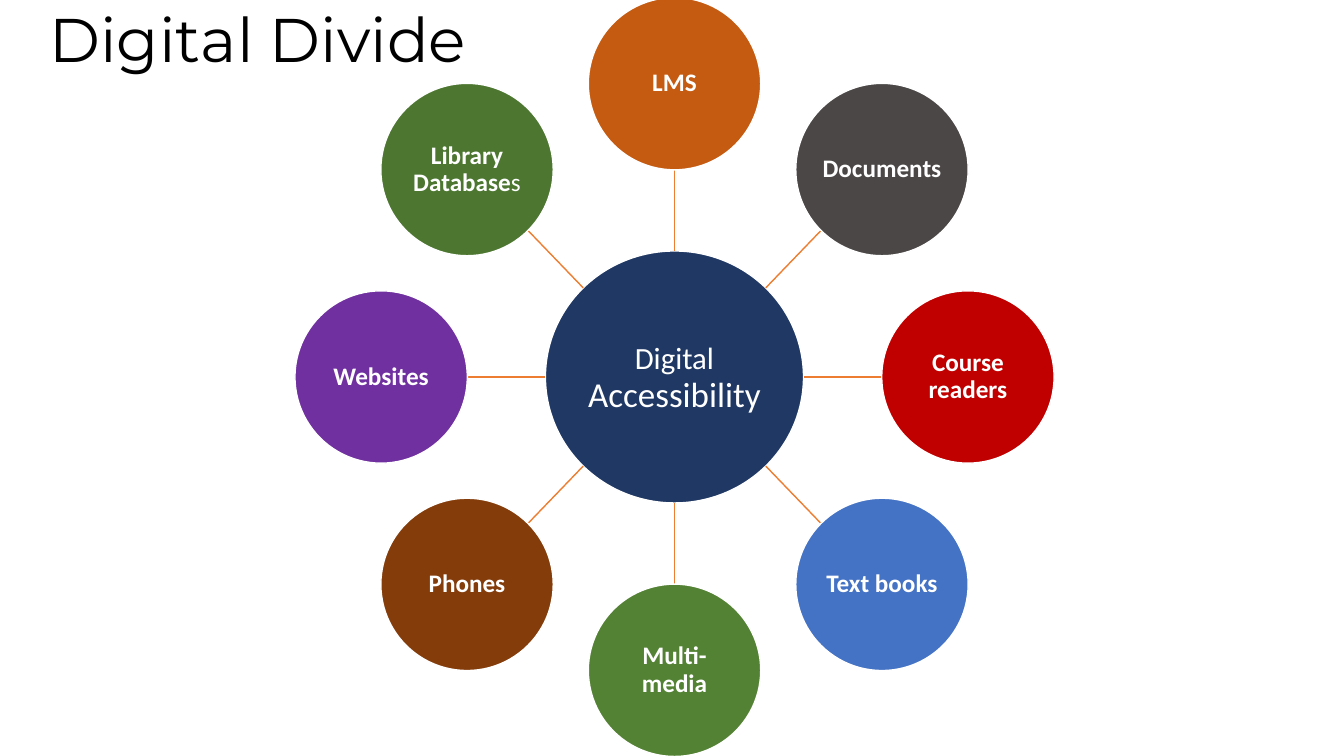
from math import cos, radians, sin

from lxml.etree import SubElement
from pptx import Presentation
from pptx.dml.color import RGBColor
from pptx.enum.shapes import MSO_CONNECTOR as Connector, MSO_SHAPE as Shape
from pptx.enum.text import MSO_ANCHOR as Anchor, MSO_AUTO_SIZE as AutoSize, PP_ALIGN as Align
from pptx.oxml.ns import qn
from pptx.util import Inches, Pt

TITLE = "Digital Divide"
HUB = [("Digital", 22, False), (" Accessibility", 25, False)]
# Clockwise from the top: colour name, then runs of (text, size, bold)
TOPICS = [
    ("orange", [("LMS", 18, True)]),
    ("grey", [("Documents", 18, True)]),
    ("red", [("Course readers", 18, True)]),
    ("blue", [("Text books", 18, True)]),
    ("green", [("Multi-media", 18, True)]),
    ("brown", [("Phones", 18, True)]),
    ("purple", [("Websites", 18, True)]),
    ("moss", [("Library Database", 18, True), ("s", 18, False)]),
]
COLORS = {
    "black": "000000", "white": "FFFFFF", "navy": "203864", "spoke": "ED7D31",
    "orange": "C55A11", "grey": "4B4747", "red": "C00000", "blue": "4472C4",
    "green": "548235", "brown": "843C0B", "purple": "7030A0", "moss": "4D7731",
}
CENTER_X, CENTER_Y = 6.69, 3.74
HUB_WIDTH, HUB_HEIGHT = 2.56, 2.5
TOPIC_SIZE = 1.71
ORBIT = 2.91


def color(name):
    return RGBColor.from_string(COLORS[name])


def add_circle(page, x, y, width, height, fill, runs, inset):
    """Draw an ellipse centred on (x, y) with a centred label."""
    circle = page.shapes.add_shape(Shape.OVAL, Inches(x - width / 2), Inches(y - height / 2),
                                   Inches(width), Inches(height))
    circle.shadow.inherit = False
    circle.fill.solid()
    circle.fill.fore_color.rgb = color(fill)
    circle.line.color.rgb = color("white")
    circle.line.width = Pt(1)
    frame = circle.text_frame
    frame.word_wrap = True
    frame.vertical_anchor = Anchor.MIDDLE
    frame.margin_left = frame.margin_right = Inches(inset)
    frame.margin_top = frame.margin_bottom = Inches(inset)
    para = frame.paragraphs[0]
    para.alignment = Align.CENTER
    para.line_spacing = 0.9
    for text, size, bold in runs:
        span = para.add_run()
        span.text = text
        span.font.name = "Calibri"
        span.font.size = Pt(size)
        span.font.bold = bold
        span.font.color.rgb = color("white")


def add_spoke(page, dx, dy):
    """Join the hub's edge to a topic's edge along the direction (dx, dy)."""
    reach = ORBIT - TOPIC_SIZE / 2
    spoke = page.shapes.add_connector(
        Connector.STRAIGHT,
        Inches(CENTER_X + HUB_WIDTH / 2 * dx), Inches(CENTER_Y + HUB_HEIGHT / 2 * dy),
        Inches(CENTER_X + reach * dx), Inches(CENTER_Y + reach * dy))
    spoke.line.color.rgb = color("spoke")
    spoke.line.width = Pt(1)
    SubElement(spoke._element.spPr, qn("a:effectLst"))


def add_title(page):
    title = page.shapes.title
    title.left, title.top = Inches(0.39), Inches(0)
    title.width, title.height = Inches(11.5), Inches(0.85)
    frame = title.text_frame
    frame.text = TITLE
    frame.auto_size = AutoSize.NONE
    frame.vertical_anchor = Anchor.MIDDLE
    para = frame.paragraphs[0]
    para.alignment = Align.LEFT
    para.line_spacing = 0.9
    font = para.runs[0].font
    font.name = "Montserrat"
    font.size = Pt(44)
    font.color.rgb = color("black")


def main():
    deck = Presentation()
    deck.slide_width, deck.slide_height = Inches(13.33), Inches(7.5)
    page = deck.slides.add_slide(deck.slide_layouts[5])
    add_title(page)
    add_circle(page, CENTER_X, CENTER_Y, HUB_WIDTH, HUB_HEIGHT, "navy", HUB, 0.02)
    for index, (fill, runs) in enumerate(TOPICS):
        angle = radians(index * 360 / len(TOPICS) - 90)
        dx, dy = cos(angle), sin(angle)
        add_spoke(page, dx, dy)
        add_circle(page, CENTER_X + ORBIT * dx, CENTER_Y + ORBIT * dy,
                   TOPIC_SIZE, TOPIC_SIZE, fill, runs, 0.01)
    deck.save("out.pptx")


if __name__ == "__main__":
    main()
